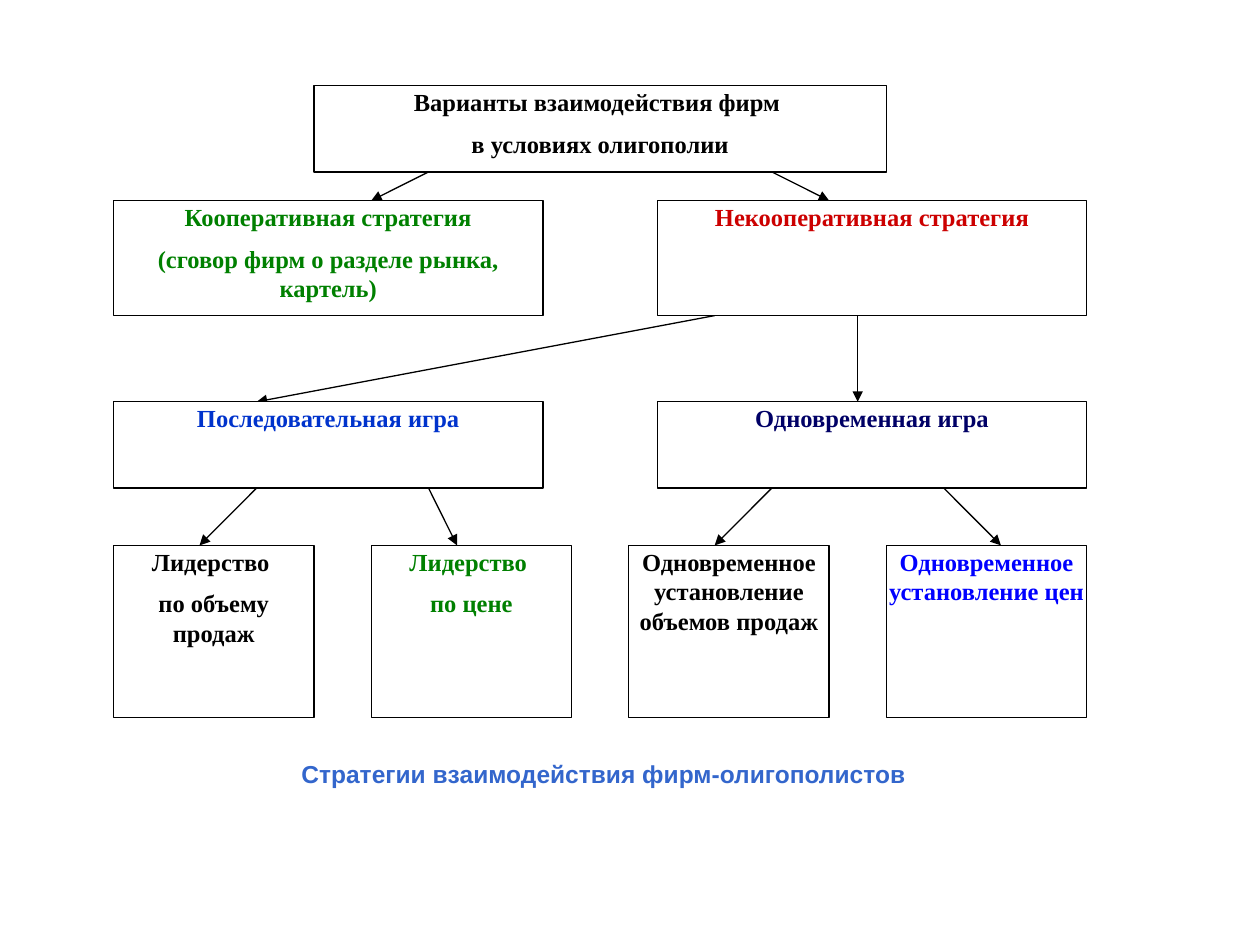
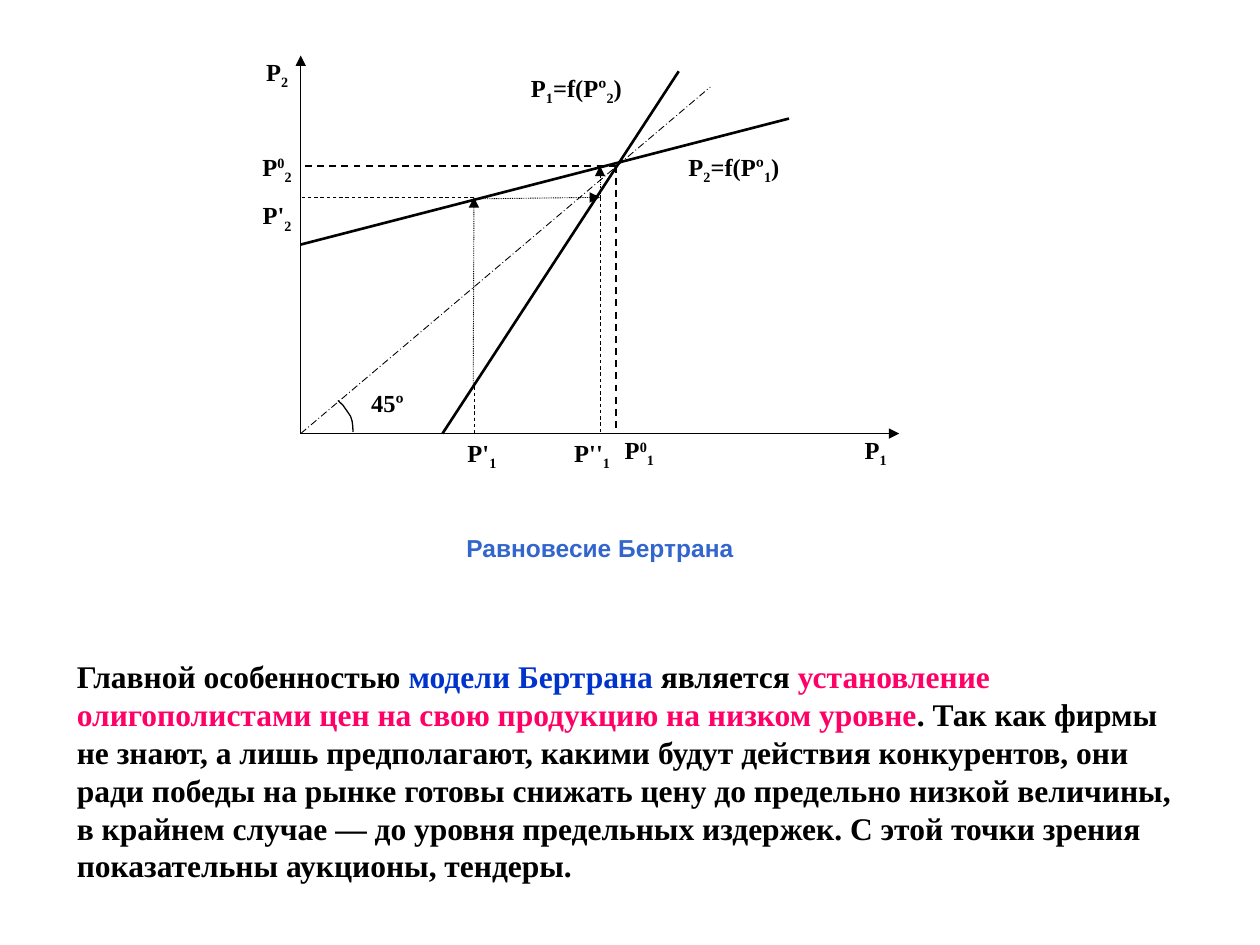
"""Builds two slides on oligopoly: a strategy tree and the Bertrand equilibrium."""
from dataclasses import dataclass

from lxml import etree
from pptx import Presentation
from pptx.dml.color import RGBColor
from pptx.enum.dml import MSO_LINE
from pptx.enum.shapes import MSO_CONNECTOR, MSO_SHAPE
from pptx.enum.text import MSO_ANCHOR, MSO_AUTO_SIZE, PP_ALIGN
from pptx.oxml.ns import qn
from pptx.util import Cm, Pt

RECT, STRAIGHT = MSO_SHAPE.RECTANGLE, MSO_CONNECTOR.STRAIGHT
CENTER, LEFT, TOP = PP_ALIGN.CENTER, PP_ALIGN.LEFT, MSO_ANCHOR.TOP
DASH, DOT, DASH_DOT = MSO_LINE.DASH, MSO_LINE.ROUND_DOT, MSO_LINE.LONG_DASH_DOT
GROW = MSO_AUTO_SIZE.SHAPE_TO_FIT_TEXT


@dataclass(frozen=True)
class Theme:
    serif: str = "Times New Roman"
    sans: str = "Arial"
    black: str = "000000"
    white: str = "FFFFFF"
    green: str = "008000"
    red: str = "CC0000"
    blue: str = "0033CC"
    navy: str = "000066"
    bright: str = "0000FF"
    pink: str = "FF0066"
    caption: str = "3366CC"
    label_size: int = 14
    body_size: int = 18
    gap: int = 7
    hair: float = 0.5
    thin: float = 0.75
    medium: float = 1
    thick: float = 1.5


T = Theme()
SLIDE_W, SLIDE_H = Cm(25.4), Cm(19.05)


@dataclass(frozen=True)
class Grid:
    left: float
    top: float
    dx: float
    dy: float

    def point(self, x, y):
        return Cm(self.left + x * self.dx), Cm(self.top + y * self.dy)

    def frame(self, x, y, w, h):
        return *self.point(x, y), Cm(w * self.dx), Cm(h * self.dy)


TREE = Grid(2.29, 1.73, 0.577, 0.579)
PLOT = Grid(5.11, 1.12, 0.3175, 0.3175)

TREE_ROWS = [
    (0, 3, 20, [(7, T.black, ["Варианты взаимодействия фирм ",
                              "в условиях олигополии"])]),
    (4, 4, 15, [(0, T.green, ["Кооперативная стратегия",
                              "(сговор фирм о разделе рынка, картель)"]),
                (19, T.red, ["Некооперативная стратегия"])]),
    (11, 3, 15, [(0, T.blue, ["Последовательная игра"]),
                 (19, T.navy, ["Одновременная игра"])]),
    (16, 6, 7, [(0, T.black, ["Лидерство ", "по объему продаж"]),
                (9, T.green, ["Лидерство ", "по цене"]),
                (18, T.black, ["Одновременное установление объемов продаж"]),
                (27, T.bright, ["Одновременное установление цен"])]),
]
TREE_ARROWS = [
    (3, 4, [(11, 9), (23, 25)]),
    (8, 11, [(21, 5), (26, 26)]),
    (14, 16, [(5, 3), (11, 12), (23, 21), (29, 31)]),
]
TREE_CAPTION = (" Стратегии взаимодействия фирм-олигополистов", (0, 23.4, 34, 2.2))

PLOT_LINES = [
    ((3, 24), (3, 0), T.thin, None, True),
    ((3, 24), (41, 24), T.thin, None, True),
    ((3, 12), (34, 4), T.thick, None, False),
    ((12, 24), (27, 1), T.thick, None, False),
    ((23, 7), (3, 7), T.medium, DASH, False),
    ((23, 7), (23, 24), T.medium, DASH, False),
    ((3, 24), (29, 2), T.hair, DASH_DOT, False),
    ((13.95, 21), (14, 9), T.hair, DOT, True),
    ((14.15, 9.1), (22, 9), T.hair, DOT, True),
    ((22, 9), (22, 7), T.hair, DOT, True),
    ((14, 21), (14, 24), T.hair, DASH, False),
    ((14, 9), (3, 9), T.hair, DASH, False),
    ((22, 9), (22, 24), T.hair, DASH, False),
]
ANGLE_ARC = [(5.36, 21.9), (5.68, 22.2), (5.96, 22.6), (6.16, 22.9),
             (6.26, 23.2), (6.3, 23.5), (6.32, 23.9)]
PLOT_LABELS = [
    (0, 0, 3, ["Р", "_2"]),
    (38, 24, 3, ["Р", "_1"]),
    (17, 1, 7, ["Р", "_1", "=f(Pº", "_2", ")"]),
    (27, 6, 7, ["Р", "_2", "=f(Pº", "_1", ")"]),
    (23, 24, 3, ["Р", "^0", "_1"]),
    (0, 6, 3, ["Р", "^0", "_2"]),
    (7, 21, 3, ["45º"]),
    (0, 9.1, 3, ["Р'", "_2"]),
    (20, 24.2, 3, ["Р''", "_1"]),
    (13, 24.2, 3, ["Р'", "_1"]),
]
PLOT_CAPTION = ("Равновесие Бертрана", (0, 30.2, 44, 3))
BASELINES = {"^": "30000", "_": "-25000"}

BODY_FRAME = (Cm(1.3), Cm(13.13), Cm(23.01), Cm(4.83))
BODY = [
    ("Главной особенностью ", T.black),
    ("модели Бертрана", T.blue),
    (" является ", T.black),
    ("установление олигополистами цен на свою продукцию на низком уровне", T.pink),
    (". Так как фирмы не знают, а лишь предполагают, какими будут действия "
     "конкурентов, они ради победы на рынке готовы снижать цену до предельно "
     "низкой величины, в крайнем случае — до уровня предельных издержек. "
     "С этой точки зрения показательны аукционы, тендеры.", T.black),
]


def rgb(value):
    return RGBColor.from_string(value)


def style(p, color=T.black, name=T.serif, size=T.label_size, align=CENTER):
    p.alignment = align
    for item in (p, *p.runs):
        font = item.font
        font.name, font.size, font.bold = name, Pt(size), True
        font.color.rgb = rgb(color)


def tight_frame(sp):
    tf = sp.text_frame
    tf.word_wrap = True
    tf.vertical_anchor = TOP
    tf.margin_left = tf.margin_right = Cm(0.05)
    tf.margin_top = tf.margin_bottom = Cm(0.03)
    return tf


def add_box(s, frame, color, lines):
    sp = s.shapes.add_shape(RECT, *frame)
    sp.shadow.inherit = False
    sp.fill.solid()
    sp.fill.fore_color.rgb = rgb(T.white)
    sp.line.color.rgb = rgb(T.black)
    sp.line.width = Pt(T.thin)
    tf = tight_frame(sp)
    for i, line in enumerate(lines):
        p = tf.add_paragraph() if i else tf.paragraphs[0]
        p.add_run().text = line
        p.space_before = Pt(T.gap if i else 0)
        style(p, color)


def add_line(s, start, end, width=T.thin, dash=None, arrow=False):
    c = s.shapes.add_connector(STRAIGHT, *start, *end)
    c.line.color.rgb = rgb(T.black)
    c.line.width = Pt(width)
    if dash:
        c.line.dash_style = dash
    if arrow:
        etree.SubElement(c.line._get_or_add_ln(), qn("a:tailEnd"), type="triangle")
    etree.SubElement(c._element.spPr, qn("a:effectLst"))


def add_label(s, frame, parts, **look):
    p = tight_frame(s.shapes.add_textbox(*frame)).paragraphs[0]
    for part in parts:
        r = p.add_run()
        r.text = part.lstrip("^_")
        if part[0] in BASELINES:
            r._r.get_or_add_rPr().set("baseline", BASELINES[part[0]])
    style(p, **look)


def add_caption(s, grid, caption):
    text, cells = caption
    add_label(s, grid.frame(*cells), [text], color=T.caption, name=T.sans)


def add_arc(s, points):
    start, *rest = [PLOT.point(*xy) for xy in points]
    builder = s.shapes.build_freeform(*start)
    builder.add_line_segments(rest, close=False)
    sp = builder.convert_to_shape()
    sp.shadow.inherit = False
    sp.fill.background()
    sp.line.color.rgb = rgb(T.black)
    sp.line.width = Pt(T.thin)


def add_body(s):
    tf = s.shapes.add_textbox(*BODY_FRAME).text_frame
    tf.word_wrap = True
    tf.auto_size = GROW
    p = tf.paragraphs[0]
    for text, _ in BODY:
        p.add_run().text = text
    style(p, size=T.body_size, align=LEFT)
    for r, (_, color) in zip(p.runs, BODY):
        r.font.color.rgb = rgb(color)


def strategy_slide(s):
    for top, bottom, ends in TREE_ARROWS:
        for x1, x2 in ends:
            add_line(s, TREE.point(x1, top), TREE.point(x2, bottom), arrow=True)
    for y, h, w, boxes in TREE_ROWS:
        for x, color, lines in boxes:
            add_box(s, TREE.frame(x, y, w, h), color, lines)
    add_caption(s, TREE, TREE_CAPTION)


def bertrand_slide(s):
    for start, end, width, dash, arrow in PLOT_LINES:
        add_line(s, PLOT.point(*start), PLOT.point(*end), width, dash, arrow)
    add_arc(s, ANGLE_ARC)
    for x, y, w, parts in PLOT_LABELS:
        add_label(s, PLOT.frame(x, y, w, 3), parts)
    add_caption(s, PLOT, PLOT_CAPTION)
    add_body(s)


def main():
    prs = Presentation()
    prs.slide_width, prs.slide_height = SLIDE_W, SLIDE_H
    blank = prs.slide_layouts[6]
    for build in (strategy_slide, bertrand_slide):
        build(prs.slides.add_slide(blank))
    prs.save("out.pptx")


if __name__ == "__main__":
    main()
